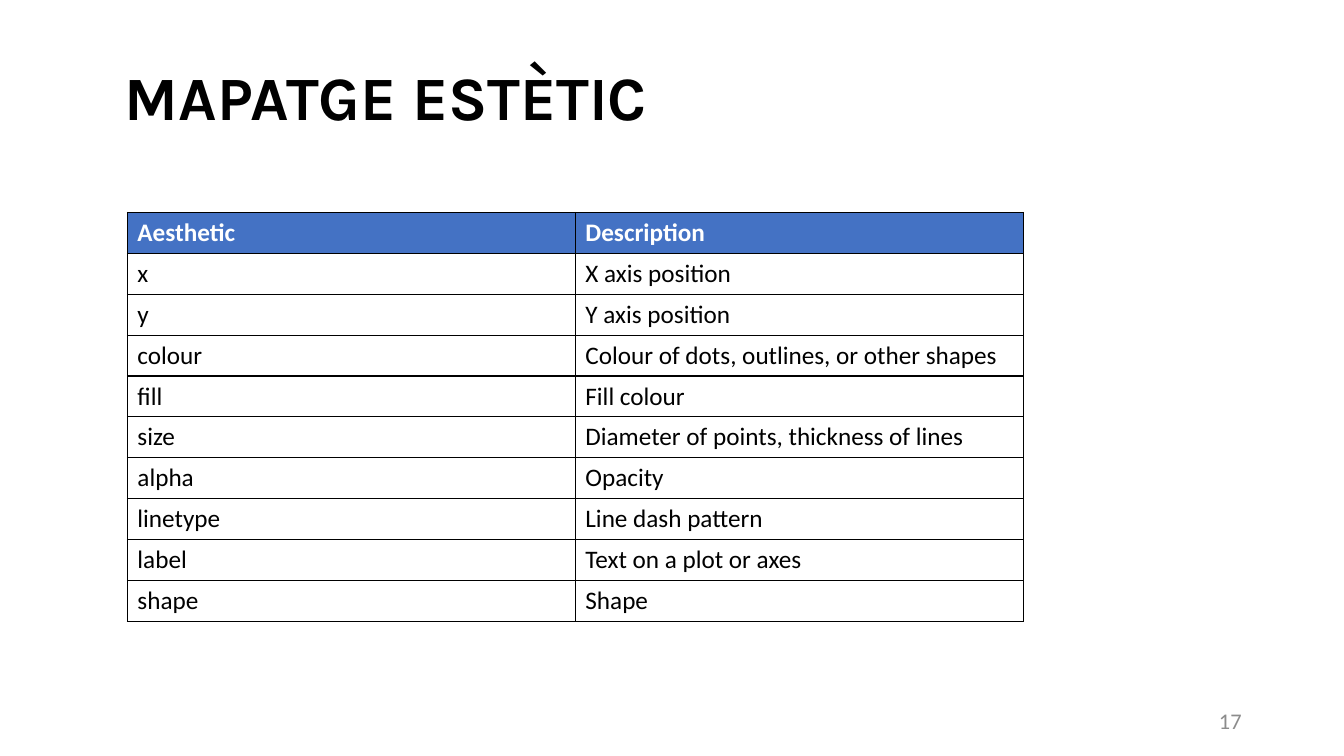
from dataclasses import dataclass

import lxml.etree
import pptx
import pptx.dml.color
import pptx.enum.text
import pptx.oxml.ns
import pptx.util

Pt = pptx.util.Pt
BLACK, WHITE, BLUE, GREY = "000000", "FFFFFF", "4472C4", "8C8C8C"


@dataclass
class Aesthetic:
    name: str
    description: str


HEADER = Aesthetic("Aesthetic", "Description")
AESTHETICS = [
    Aesthetic("x", "X axis position"),
    Aesthetic("y", "Y axis position"),
    Aesthetic("colour", "Colour of dots, outlines, or other shapes"),
    Aesthetic("fill", "Fill colour"),
    Aesthetic("size", "Diameter of points, thickness of lines"),
    Aesthetic("alpha", "Opacity"),
    Aesthetic("linetype", "Line dash pattern"),
    Aesthetic("label", "Text on a plot or axes"),
    Aesthetic("shape", "Shape"),
]


def rgb(colour: str) -> pptx.dml.color.RGBColor:
    return pptx.dml.color.RGBColor.from_string(colour)


def set_text(tf, text: str, size: float, colour: str, bold: bool = False,
             font: str = "Calibri") -> None:
    tf.text = text
    f = tf.paragraphs[0].runs[0].font
    f.name, f.size, f.bold = font, Pt(size), bold
    f.color.rgb = rgb(colour)


def add_borders(cell, colour: str, width: float) -> None:
    tcPr = cell._tc.get_or_add_tcPr()
    qn = pptx.oxml.ns.qn
    for i, side in enumerate(("a:lnL", "a:lnR", "a:lnT", "a:lnB")):
        ln = lxml.etree.Element(qn(side), w=str(Pt(width)))
        fill = lxml.etree.SubElement(ln, qn("a:solidFill"))
        lxml.etree.SubElement(fill, qn("a:srgbClr"), val=colour)
        tcPr.insert(i, ln)


def add_title(s, text: str) -> None:
    sp = s.shapes.title
    sp.left, sp.top, sp.width, sp.height = Pt(82), Pt(44.6), Pt(794), Pt(51)
    tf = sp.text_frame
    set_text(tf, text, 44, BLACK, True, "Karla")
    tf.vertical_anchor = pptx.enum.text.MSO_ANCHOR.TOP
    tf.auto_size = pptx.enum.text.MSO_AUTO_SIZE.NONE
    p = tf.paragraphs[0]
    p.alignment = pptx.enum.text.PP_ALIGN.LEFT
    p.line_spacing, p.space_before = 0.9, Pt(10)


def add_aesthetics_table(s, rows: list[Aesthetic]) -> None:
    row_height, col_width = 29.2, 320
    table = s.shapes.add_table(len(rows), 2, Pt(91), Pt(151.8),
                               Pt(2 * col_width), Pt(row_height * len(rows))).table
    table.horz_banding = False
    for i, row in enumerate(rows):
        table.rows[i].height = Pt(row_height)
        header = i == 0
        for j, text in enumerate((row.name, row.description)):
            cell = table.cell(i, j)
            set_text(cell.text_frame, text, 18, WHITE if header else BLACK, header)
            if header:
                cell.fill.solid()
                cell.fill.fore_color.rgb = rgb(BLUE)
            else:
                cell.fill.background()
            add_borders(cell, BLACK, 1)


def add_page_number(s, number: str) -> None:
    tf = s.shapes.add_textbox(Pt(678), Pt(500.5), Pt(216), Pt(28.75)).text_frame
    tf.word_wrap = True
    tf.vertical_anchor = pptx.enum.text.MSO_ANCHOR.MIDDLE
    set_text(tf, number, 16, GREY)
    tf.paragraphs[0].alignment = pptx.enum.text.PP_ALIGN.RIGHT


def main() -> None:
    prs = pptx.Presentation()
    prs.slide_width, prs.slide_height = Pt(960), Pt(540)
    s = prs.slides.add_slide(prs.slide_layouts[5])

    # Heading
    add_title(s, "MAPATGE ESTÈTIC")

    # Table of aesthetics
    add_aesthetics_table(s, [HEADER, *AESTHETICS])

    # Footer
    add_page_number(s, "17")

    prs.save("out.pptx")


if __name__ == "__main__":
    main()
